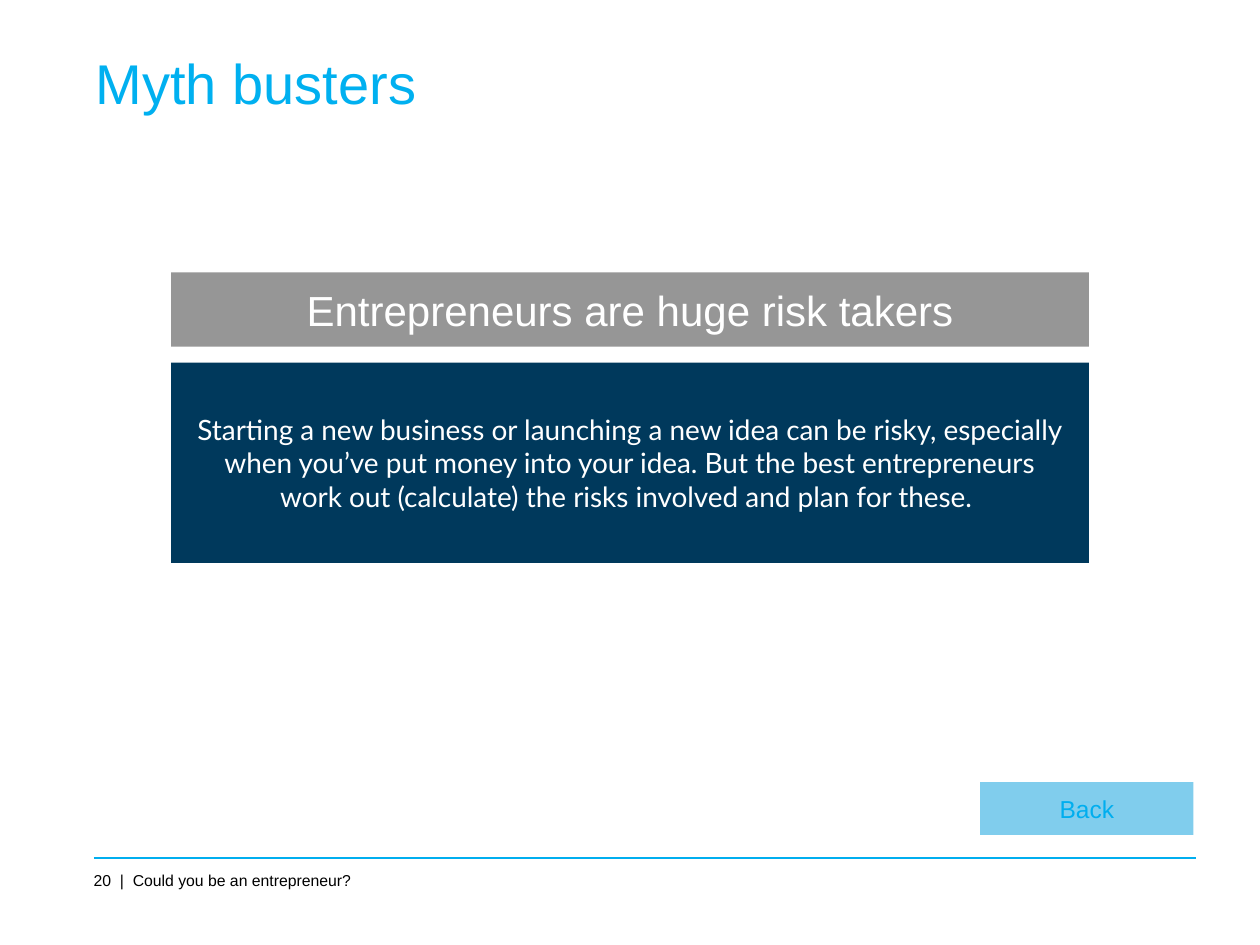
import pptx
import pptx.dml.color
import pptx.enum.shapes
import pptx.enum.text
import pptx.oxml
import pptx.oxml.ns
import pptx.util

Cm = pptx.util.Cm
Pt = pptx.util.Pt
ALIGN = pptx.enum.text.PP_ALIGN
ANCHOR = pptx.enum.text.MSO_ANCHOR

COLOURS = {
    "title": "00B0F0",
    "accent": "00AEEF",
    "button": "80CDED",
    "grey": "969696",
    "navy": "00395C",
    "white": "FFFFFF",
    "black": "000000",
}


def colour(name):
    return pptx.dml.color.RGBColor.from_string(COLOURS[name])


def set_values(target, values):
    for name, value in values.items():
        setattr(target, name, value)


def write_text(shape, text, size, text_colour, font="Arial", inset=0,
               align=ALIGN.LEFT, anchor=ANCHOR.MIDDLE):
    frame = shape.text_frame
    margins = ("margin_left", "margin_top", "margin_right", "margin_bottom")
    set_values(frame, dict.fromkeys(margins, Cm(inset)))
    set_values(frame, {"word_wrap": True, "vertical_anchor": anchor})
    paragraph = frame.paragraphs[0]
    paragraph.alignment = align
    run = paragraph.add_run()
    run.text = text
    set_values(run.font, {"name": font, "size": Pt(size)})
    run.font.color.rgb = colour(text_colour)


def add_label(slide, box, text, size, text_colour, **options):
    shape = slide.shapes.add_textbox(*map(Cm, box))
    write_text(shape, text, size, text_colour, **options)


def add_block(slide, box, fill, text, size, text_colour, **options):
    shape = slide.shapes.add_shape(
        pptx.enum.shapes.MSO_SHAPE.RECTANGLE, *map(Cm, box))
    shape.shadow.inherit = False
    shape.fill.solid()
    shape.fill.fore_color.rgb = colour(fill)
    shape.line.fill.background()
    write_text(shape, text, size, text_colour, align=ALIGN.CENTER, **options)


def add_title(slide, box):
    add_label(slide, box, "Myth busters", 32, "title")


def add_myth(slide, box):
    left, top, width, height = box
    heading_height, gap = 1.5, 0.32
    answer_offset = heading_height + gap
    add_block(slide, (left, top + answer_offset, width, height - answer_offset),
              "navy",
              "Starting a new business or launching a new idea can be risky, "
              "especially when you’ve put money into your idea. But the best "
              "entrepreneurs work out (calculate) the risks involved and plan "
              "for these. ",
              16, "white", font="Lato", inset=0.4)
    add_block(slide, (left, top, width, heading_height), "grey",
              "Entrepreneurs are huge risk takers", 24, "white")


def add_back_button(slide, box):
    add_block(slide, box, "button", "Back", 14, "accent")


def add_footer(slide, box):
    left, top, width, height = box
    rule = slide.shapes.add_connector(
        pptx.enum.shapes.MSO_CONNECTOR.STRAIGHT,
        Cm(left), Cm(top), Cm(left + width), Cm(top))
    rule.line.color.rgb = colour("accent")
    rule.line.width = Pt(1)
    properties = rule.element.find(pptx.oxml.ns.qn("p:spPr"))
    properties.append(pptx.oxml.parse_xml(
        f'<a:effectLst {pptx.oxml.ns.nsdecls("a")}/>'))
    text_height = 0.38
    add_label(slide, (left, top + height - text_height, 8.05, text_height),
              "20  |  Could you be an entrepreneur?", 9, "black",
              anchor=ANCHOR.BOTTOM)


def main():
    presentation = pptx.Presentation()
    set_values(presentation,
               {"slide_width": Cm(25.4), "slide_height": Cm(19.05)})
    slide = presentation.slides.add_slide(presentation.slide_layouts[6])
    add_footer(slide, (1.89, 17.3, 22.22, 0.63))
    add_myth(slide, (3.45, 5.49, 18.5, 5.86))
    add_back_button(slide, (19.76, 15.77, 4.3, 1.06))
    add_title(slide, (1.93, 0.97, 22.4, 1.37))
    presentation.save("out.pptx")


if __name__ == "__main__":
    main()
